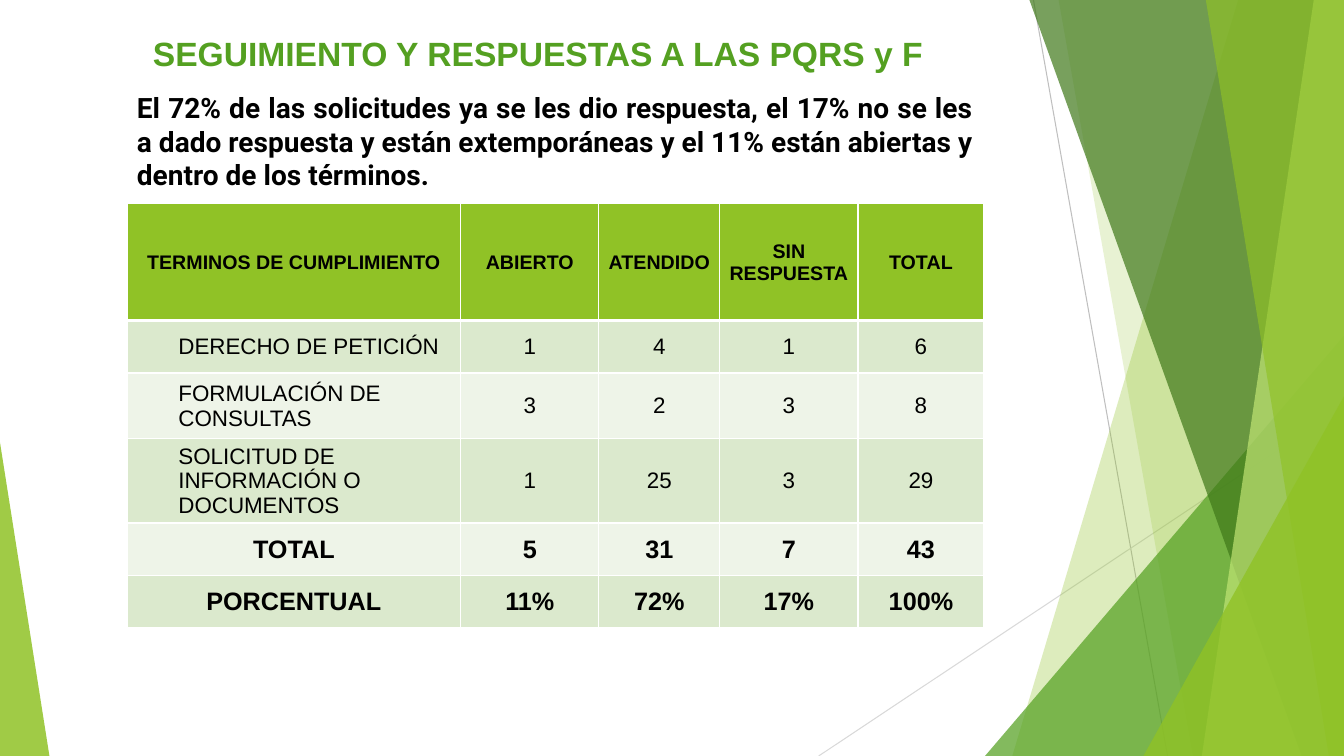
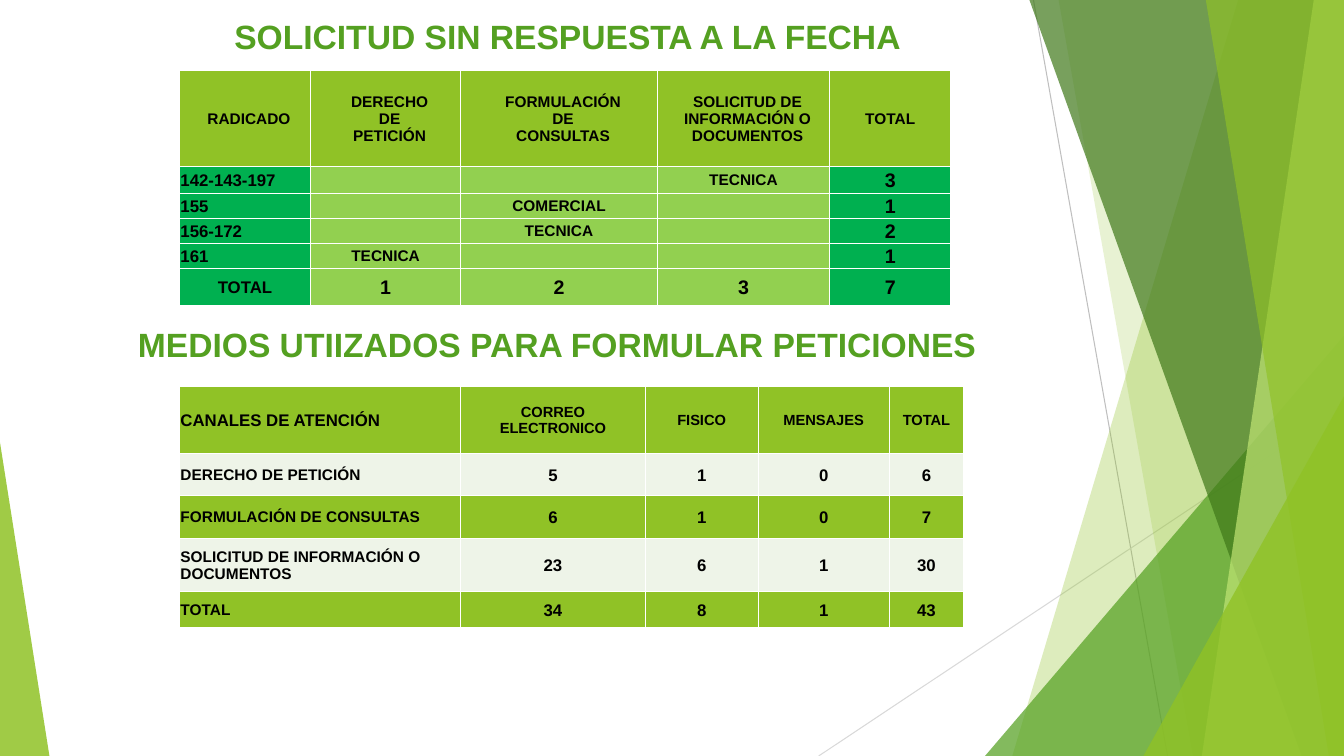
from dataclasses import dataclass

from lxml.etree import SubElement
from pptx import Presentation
from pptx.dml.color import RGBColor
from pptx.enum.shapes import MSO_CONNECTOR, MSO_SHAPE
from pptx.enum.text import MSO_ANCHOR, PP_ALIGN
from pptx.oxml import parse_xml
from pptx.oxml.ns import nsdecls, qn
from pptx.util import Inches, Pt


@dataclass(frozen=True)
class Theme:
    """Colours, fonts and type sizes of the deck."""
    width: float = 13.33
    height: float = 7.5
    lime: str = "90C226"
    green: str = "54A021"
    forest: str = "3F7819"
    pale: str = "C0E474"
    mint: str = "DBE9CD"
    mist: str = "EEF4E8"
    emerald: str = "00B050"
    grass: str = "92D050"
    white: str = "FFFFFF"
    black: str = "000000"
    rule_dark: str = "BFBFBF"
    rule_light: str = "D9D9D9"
    font: str = "Arial"
    body_font: str = "Roboto"
    title_size: float = 24
    body_size: float = 20
    total_size: float = 18
    cell_size: float = 16
    head_size: float = 14
    small_size: float = 12
    label_size: float = 11
    channel_size: float = 10.5
    inset: float = 0.01


@dataclass(frozen=True)
class Look:
    """Appearance of one table cell."""
    fill: str
    size: float
    bold: bool = True
    align: PP_ALIGN = PP_ALIGN.CENTER
    left: float = Theme.inset


class Deck:
    """Holds the theme and the current slide, and draws each kind of element."""

    def __init__(self, theme):
        self.t = theme
        self.prs = Presentation()
        self.prs.slide_width = Inches(theme.width)
        self.prs.slide_height = Inches(theme.height)
        self.layout = self.prs.slide_layouts[6]
        for ph in list(self.layout.placeholders):
            self.layout.shapes.element.remove(ph.element)
        self.slide = None

    def add_slide(self):
        self.slide = self.prs.slides.add_slide(self.layout)

    def set_font(self, p, size, color, bold=True, font=None):
        p.font.name = font or self.t.font
        p.font.size = Pt(size)
        p.font.bold = bold
        p.font.color.rgb = RGBColor.from_string(color)

    def line(self, x1, y1, x2, y2, color):
        ln = self.slide.shapes.add_connector(
            MSO_CONNECTOR.STRAIGHT, Inches(x1), Inches(y1), Inches(x2), Inches(y2))
        ln.line.color.rgb = RGBColor.from_string(color)
        ln.line.width = Pt(0.75)
        SubElement(ln.element.spPr, qn("a:effectLst"))

    def tint(self, sp, color, opacity):
        sp.shadow.inherit = False
        sp.line.fill.background()
        sp.fill.solid()
        sp.fill.fore_color.rgb = RGBColor.from_string(color)
        clr = next(sp.element.spPr.iter(qn("a:srgbClr")))
        SubElement(clr, qn("a:alpha")).set("val", str(opacity * 1000))

    def blade(self, top_x, bottom_x, color, opacity):
        right, bottom = Inches(self.t.width), Inches(self.t.height)
        fb = self.slide.shapes.build_freeform(Inches(top_x), 0)
        fb.add_line_segments([(right, 0), (right, bottom), (Inches(bottom_x), bottom)])
        self.tint(fb.convert_to_shape(), color, opacity)

    def triangle(self, x, y, w, apex, color, opacity):
        sp = self.slide.shapes.add_shape(
            MSO_SHAPE.ISOSCELES_TRIANGLE, Inches(x), Inches(y),
            Inches(w), Inches(self.t.height - y))
        sp.adjustments[0] = apex
        self.tint(sp, color, opacity)

    def backdrop(self):
        t = self.t
        self.line(10.25, 0, 11.58, t.height, t.rule_dark)
        self.line(t.width, 4.03, 8.12, t.height, t.rule_light)
        self.blade(12.28, 10.04, t.lime, 30)
        self.blade(10.5, 11.83, t.lime, 20)
        self.triangle(9.77, 3.33, 3.56, 1, t.green, 72)
        self.blade(10.21, 12.91, t.forest, 70)
        self.blade(13.03, 11.92, t.pale, 70)
        self.blade(11.96, 13.18, t.lime, 65)
        self.triangle(11.34, 3.93, 1.99, 1, t.lime, 80)
        self.triangle(0, 4.39, 0.49, 0, t.lime, 85)
        for sp in list(self.slide.shapes):
            self.layout.shapes.element.append(sp.element)

    def text(self, x, y, w, h, text, align):
        tf = self.slide.shapes.add_textbox(
            Inches(x), Inches(y), Inches(w), Inches(h)).text_frame
        tf.word_wrap = True
        p = tf.paragraphs[0]
        p.text = text
        p.alignment = align
        return p

    def title(self, x, y, w, text):
        p = self.text(x, y, w, 0.46, text, PP_ALIGN.CENTER)
        p.line_spacing = 0.9
        self.set_font(p, self.t.title_size, self.t.green)

    def body(self, x, y, w, h, text):
        p = self.text(x, y, w, h, text, PP_ALIGN.JUSTIFY)
        self.set_font(p, self.t.body_size, self.t.black, font=self.t.body_font)

    def cell(self, cell, text, look):
        cell.margin_left = Inches(look.left)
        cell.margin_top = cell.margin_right = Inches(self.t.inset)
        cell.margin_bottom = 0
        cell.vertical_anchor = MSO_ANCHOR.MIDDLE
        cell.fill.solid()
        cell.fill.fore_color.rgb = RGBColor.from_string(look.fill)
        cell.text_frame.text = text
        for p in cell.text_frame.paragraphs:
            p.alignment = look.align
            self.set_font(p, look.size, self.t.black, look.bold)

    def borders(self, frame, head_rule):
        for r, tr in enumerate(frame.element.iter(qn("a:tr"))):
            widths = {"L": 1, "R": 1, "T": head_rule if r == 1 else 1,
                      "B": head_rule if r == 0 else 1}
            for tc_pr in tr.iter(qn("a:tcPr")):
                for i, (side, width) in enumerate(widths.items()):
                    tc_pr.insert(i, parse_xml(
                        f'<a:ln{side} {nsdecls("a")} w="{Pt(width)}"><a:solidFill>'
                        f'<a:srgbClr val="{self.t.white}"/></a:solidFill></a:ln{side}>'))

    def table(self, x, y, cols, rows, texts, look, head_rule=1):
        frame = self.slide.shapes.add_table(
            len(rows), len(cols), Inches(x), Inches(y),
            Inches(sum(cols)), Inches(sum(rows)))
        tbl = frame.table
        tbl.first_row = tbl.horz_banding = False
        for col, w in zip(tbl.columns, cols):
            col.width = Inches(w)
        for row, h in zip(tbl.rows, rows):
            row.height = Inches(h)
        for r, row in enumerate(texts):
            for c, text in enumerate(row):
                self.cell(tbl.cell(r, c), text, look(r, c))
        self.borders(frame, head_rule)


T = Theme()


def compliance_look(r, c):
    if r == 0:
        return Look(T.lime, T.head_size)
    fill = T.mint if r % 2 else T.mist
    if r > 3:
        return Look(fill, T.total_size)
    if c == 0:
        return Look(fill, T.cell_size, False, PP_ALIGN.LEFT, 0.51)
    return Look(fill, T.cell_size, False)


def pending_look(r, c):
    if r == 0:
        return Look(T.lime, T.label_size, left=0.09 if c < 4 else T.inset)
    if c == 0:
        align = PP_ALIGN.CENTER if r == 5 else PP_ALIGN.LEFT
        return Look(T.emerald, T.small_size, align=align)
    if c == 4:
        return Look(T.emerald, T.head_size)
    return Look(T.grass, T.head_size if r == 5 else T.label_size)


def channel_look(r, c):
    fill = T.mist if r % 2 else T.lime
    if c == 0:
        return Look(fill, T.label_size if r else T.small_size, align=PP_ALIGN.LEFT)
    return Look(fill, T.small_size if r else T.channel_size)


def main():
    deck = Deck(T)

    deck.add_slide()
    deck.backdrop()
    deck.table(
        1.26, 2.02, [3.31, 1.37, 1.2, 1.37, 1.25], [1.16, 0.52, 0.65, 0.84, 0.52, 0.52],
        [["TERMINOS DE CUMPLIMIENTO", "ABIERTO", "ATENDIDO", "SIN\vRESPUESTA", "TOTAL"],
         ["DERECHO DE PETICIÓN", "1", "4", "1", "6"],
         ["FORMULACIÓN DE CONSULTAS", "3", "2", "3", "8"],
         ["SOLICITUD DE INFORMACIÓN O DOCUMENTOS", "1", "25", "3", "29"],
         ["TOTAL", "5", "31", "7", "43"],
         ["PORCENTUAL", "11%", "72%", "17%", "100%"]],
        compliance_look, head_rule=3)
    deck.title(1.02, 0.32, 8.63, "SEGUIMIENTO Y RESPUESTAS A LAS PQRS y F")
    deck.body(1.26, 0.85, 8.49, 1.11,
              "El 72% de las solicitudes ya se les dio respuesta, el 17% no se les a dado "
              "respuesta y están extemporáneas y el 11% están abiertas y dentro de los términos.")

    deck.add_slide()
    deck.title(1.83, 0.15, 7.6, "SOLICITUD SIN RESPUESTA A LA FECHA")
    deck.table(
        1.78, 0.7, [1.3, 1.49, 1.95, 1.71, 1.2], [0.95, 0.27, 0.25, 0.24, 0.25, 0.37],
        [["RADICADO", "DERECHO\vDE\vPETICIÓN", "FORMULACIÓN\vDE\vCONSULTAS",
          "SOLICITUD DE\vINFORMACIÓN O\vDOCUMENTOS", "TOTAL"],
         ["142-143-197", "", "", "TECNICA", "3"],
         ["155", "", "COMERCIAL", "", "1"],
         ["156-172", "", "TECNICA", "", "2"],
         ["161", "TECNICA", "", "", "1"],
         ["TOTAL", "1", "2", "3", "7"]],
        pending_look)
    deck.table(
        1.78, 3.83, [2.79, 1.83, 1.12, 1.3, 0.74], [0.67, 0.42, 0.42, 0.53, 0.36],
        [["CANALES DE ATENCIÓN", "CORREO\nELECTRONICO", "FISICO", "MENSAJES", "TOTAL"],
         ["DERECHO DE PETICIÓN", "5", "1", "0", "6"],
         ["FORMULACIÓN DE CONSULTAS", "6", "1", "0", "7"],
         ["SOLICITUD DE INFORMACIÓN O DOCUMENTOS", "23", "6", "1", "30"],
         ["TOTAL", "34", "8", "1", "43"]],
        channel_look)
    deck.title(0.57, 3.21, 9.91, "MEDIOS UTIIZADOS PARA FORMULAR PETICIONES")

    deck.prs.save("out.pptx")


if __name__ == "__main__":
    main()
